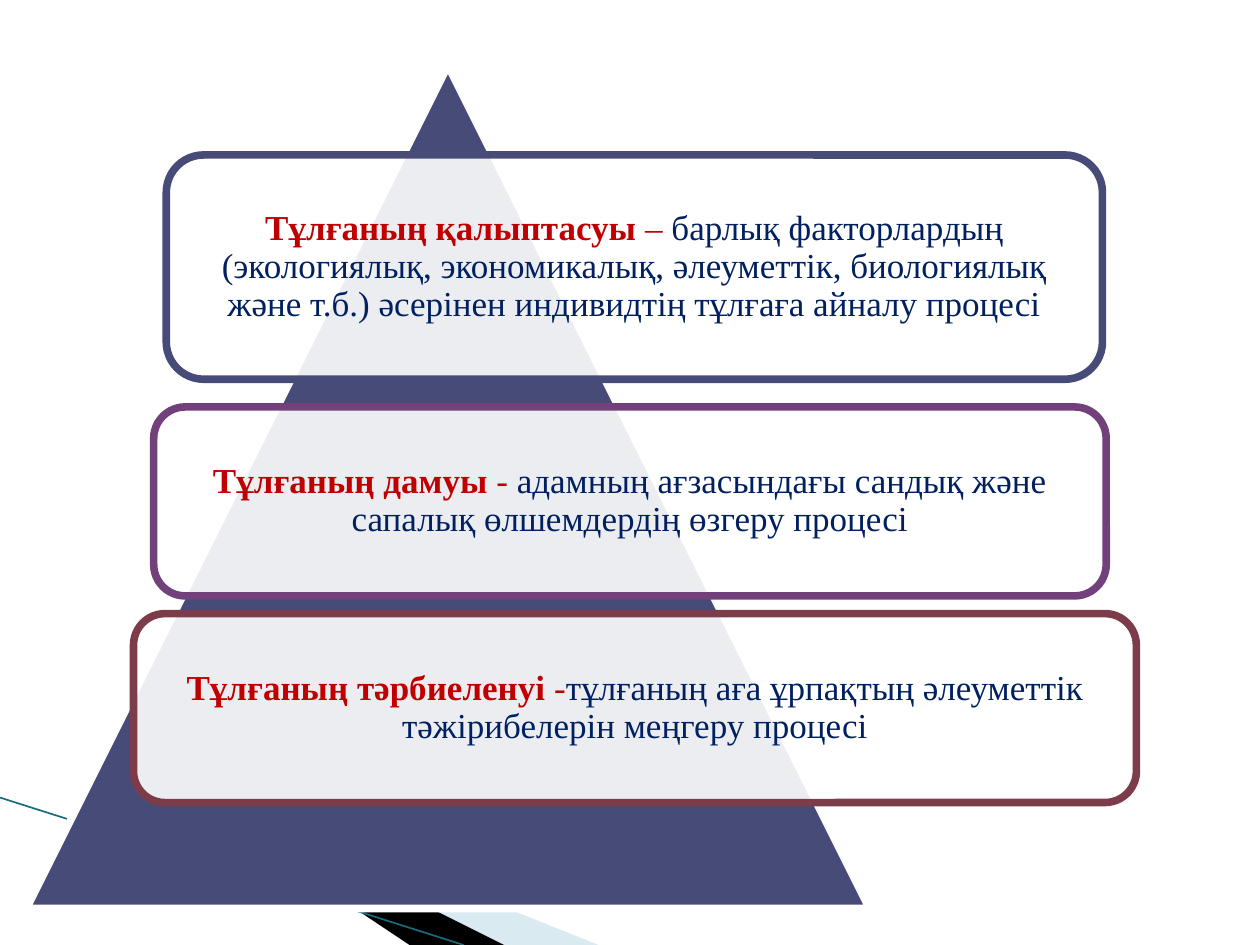
from lxml import etree
from pptx import Presentation
from pptx.dml.color import RGBColor
from pptx.enum.shapes import MSO_CONNECTOR, MSO_SHAPE
from pptx.enum.text import MSO_ANCHOR, PP_ALIGN
from pptx.oxml.ns import qn
from pptx.util import Inches, Pt

WHITE = RGBColor(0xFF, 0xFF, 0xFF)
BLACK = RGBColor(0x00, 0x00, 0x00)
INDIGO = RGBColor(0x47, 0x4B, 0x78)
PURPLE = RGBColor(0x72, 0x41, 0x7B)
MAROON = RGBColor(0x7D, 0x3C, 0x4A)
PALE_BLUE = RGBColor(0xA0, 0xCB, 0xDC)
TEAL = RGBColor(0x1A, 0x6B, 0x7C)
RED = RGBColor(0xC0, 0x00, 0x00)
NAVY = RGBColor(0x00, 0x20, 0x60)
BORDER = Pt(4.33)

WEDGES = [
    ([(0.55, 6.5), (5.95, 7.5), (4.56, 7.5)], PALE_BLUE, 40),
    ([(0.53, 6.49), (4.57, 7.5), (3.72, 7.5)], BLACK, 100),
]
TRIANGLE = (0.21, 0.52, 6.69, 6.69)
CARDS = [
    ((1.32, 1.23, 7.43, 1.78), INDIGO, "Тұлғаның қалыптасуы", " – ",
     "барлық факторлардың (экологиялық, экономикалық, әлеуметтік, "
     "биологиялық және т.б.) әсерінен индивидтің тұлғаға айналу процесі"),
    ((1.22, 3.23, 7.56, 1.5), PURPLE, "Тұлғаның дамуы ", "- ",
     "адамның ағзасындағы сандық және сапалық өлшемдердің өзгеру процесі"),
    ((1.06, 4.87, 7.96, 1.5), MAROON, "Тұлғаның тәрбиеленуі", " -",
     "тұлғаның аға ұрпақтың әлеуметтік тәжірибелерін меңгеру процесі"),
]


def paint(s, color, opacity=100, border=None):
    s.shadow.inherit = False
    s.fill.solid()
    s.fill.fore_color.rgb = color
    if opacity < 100:
        clr = s.fill._xPr.find(qn("a:solidFill"))[0]
        etree.SubElement(clr, qn("a:alpha"), val=str(opacity * 1000))
    if border is None:
        s.line.fill.background()
    else:
        s.line.color.rgb = border
        s.line.width = BORDER


def add_wedge(shapes, points, color, opacity):
    builder = shapes.build_freeform(*points[0], scale=Inches(1))
    builder.add_line_segments(points[1:], close=True)
    paint(builder.convert_to_shape(), color, opacity)


def add_card(shapes, box, border, term, dash, meaning):
    s = shapes.add_shape(MSO_SHAPE.ROUNDED_RECTANGLE, *map(Inches, box))
    paint(s, WHITE, 90, border)
    tf = s.text_frame
    tf.word_wrap = True
    tf.vertical_anchor = MSO_ANCHOR.MIDDLE
    tf.margin_left = tf.margin_right = Inches(0.08)
    tf.margin_top = tf.margin_bottom = Inches(0.08)
    p = tf.paragraphs[0]
    p.alignment = PP_ALIGN.CENTER
    p.line_spacing = 0.9
    p.font.name = "Times New Roman"
    p.font.size = Pt(20)
    for text, color, bold in ((term, RED, True), (dash, RED, False), (meaning, NAVY, False)):
        r = p.add_run()
        r.text = text
        r.font.bold = bold
        r.font.color.rgb = color


def main():
    """Build the slide on personality formation, development and upbringing."""
    prs = Presentation()
    prs.slide_width, prs.slide_height = Inches(10), Inches(7.5)
    shapes = prs.slides.add_slide(prs.slide_layouts[6]).shapes

    for wedge in WEDGES:
        add_wedge(shapes, *wedge)
    edge = shapes.add_connector(
        MSO_CONNECTOR.STRAIGHT, Inches(0), Inches(6.33), Inches(3.68), Inches(7.5))
    edge.line.color.rgb = TEAL
    edge.line.width = Pt(0.95)
    etree.SubElement(edge._element.spPr, qn("a:effectLst"))

    triangle = shapes.add_shape(MSO_SHAPE.ISOSCELES_TRIANGLE, *map(Inches, TRIANGLE))
    paint(triangle, INDIGO, border=WHITE)
    for card in CARDS:
        add_card(shapes, *card)
    prs.save("out.pptx")


if __name__ == "__main__":
    main()
